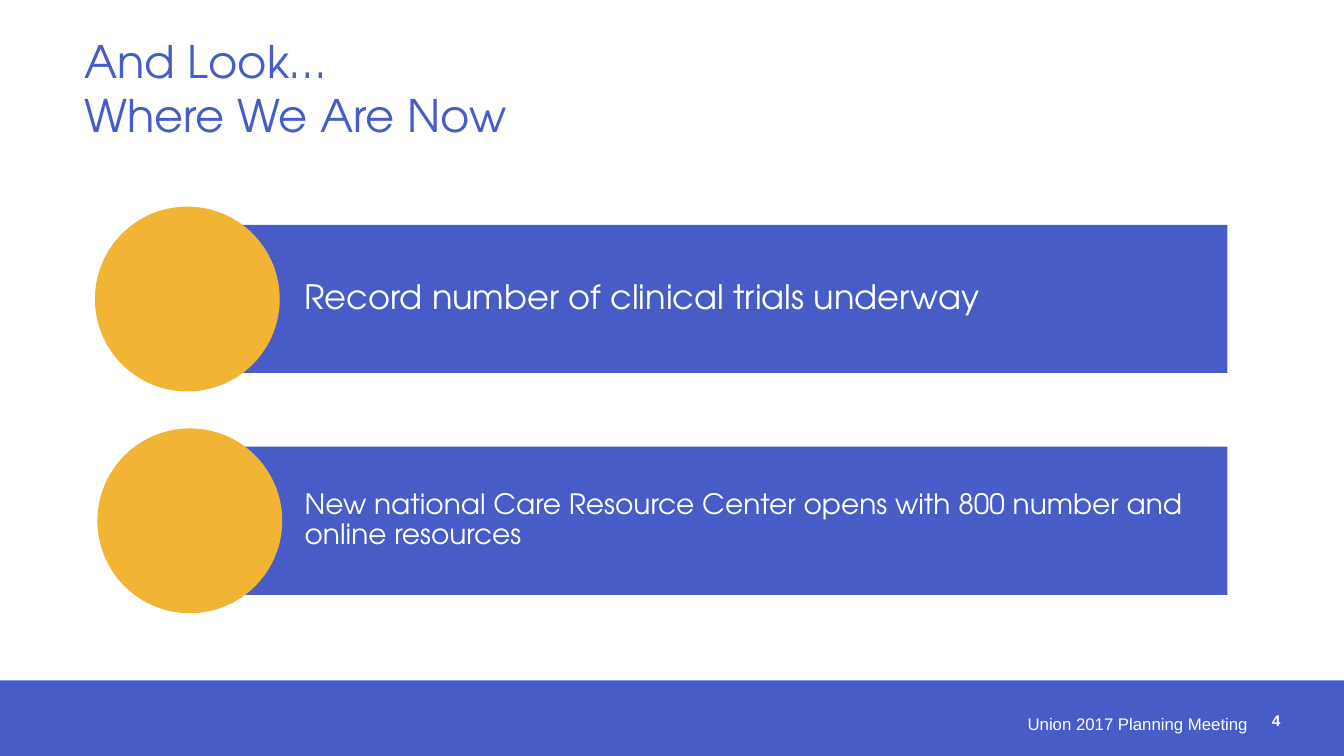
from pptx import Presentation
from pptx.dml.color import RGBColor
from pptx.enum.shapes import MSO_SHAPE
from pptx.enum.text import MSO_ANCHOR, MSO_AUTO_SIZE, PP_ALIGN
from pptx.util import Pt

BLUE = RGBColor(0x48, 0x5C, 0xC7)
GOLD = RGBColor(0xF1, 0xB4, 0x34)
WHITE = RGBColor(0xFF, 0xFF, 0xFF)
HEADING_FONT = "TeX Gyre Adventor"
FOOTER_FONT = "Arial"

TITLE = "And Look…\vWhere We Are Now"
# text, font size, circle left, text margin
MILESTONES = [
    ("Record number of clinical trials underway", 24, 67.8, 5),
    ("New national Care Resource Center opens with 800 number and online resources",
     20, 69.6, 4.3),
]
FOOTER = "Union 2017 Planning Meeting"
PAGE_NUMBER = "4"

SLIDE_WIDTH, SLIDE_HEIGHT = 960, 540
FOOTER_TOP = 486
BAR_LEFT, BAR_WIDTH, BAR_HEIGHT = 133.8, 743, 105.8
CIRCLE_SIZE = 132
FIRST_CIRCLE_TOP, ROW_PITCH = 147.6, 158.4
TEXT_INDENT = 83.8


def add_filled_shape(kind, left, top, width, height, color):
    shape = slide.shapes.add_shape(kind, Pt(left), Pt(top), Pt(width), Pt(height))
    shape.shadow.inherit = False
    shape.fill.solid()
    shape.fill.fore_color.rgb = color
    shape.line.fill.background()
    return shape


def set_margins(frame, left, top, right, bottom):
    frame.margin_left, frame.margin_top = Pt(left), Pt(top)
    frame.margin_right, frame.margin_bottom = Pt(right), Pt(bottom)


def write(frame, text, font_name, size, color, align=PP_ALIGN.LEFT, bold=False):
    frame.word_wrap = True
    paragraph = frame.paragraphs[0]
    paragraph.text = text
    paragraph.alignment = align
    paragraph.font.name = font_name
    paragraph.font.size = Pt(size)
    paragraph.font.bold = bold
    paragraph.font.color.rgb = color
    return paragraph


def add_footer_text(text, left, top, width, margins, size, **style):
    box = slide.shapes.add_textbox(Pt(left), Pt(top), Pt(width), Pt(13))
    set_margins(box.text_frame, *margins)
    paragraph = write(box.text_frame, text, FOOTER_FONT, size, WHITE, **style)
    paragraph.line_spacing = Pt(12.1)


presentation = Presentation()
presentation.slide_width = Pt(SLIDE_WIDTH)
presentation.slide_height = Pt(SLIDE_HEIGHT)
slide = presentation.slides.add_slide(presentation.slide_layouts[5])

add_filled_shape(MSO_SHAPE.RECTANGLE, 0, FOOTER_TOP, SLIDE_WIDTH,
                 SLIDE_HEIGHT - FOOTER_TOP, BLUE)

title = slide.shapes.title
title.left, title.top, title.width, title.height = Pt(60), Pt(24), Pt(672), Pt(47)
title.text_frame.auto_size = MSO_AUTO_SIZE.NONE
title.text_frame.vertical_anchor = MSO_ANCHOR.TOP
set_margins(title.text_frame, 0, 0, 0, 0)
write(title.text_frame, TITLE, HEADING_FONT, 32, BLUE)

for row, (text, size, circle_left, margin) in enumerate(MILESTONES):
    circle_top = FIRST_CIRCLE_TOP + row * ROW_PITCH
    bar_top = circle_top + (CIRCLE_SIZE - BAR_HEIGHT) / 2
    bar = add_filled_shape(MSO_SHAPE.RECTANGLE, BAR_LEFT, bar_top,
                           BAR_WIDTH, BAR_HEIGHT, BLUE)
    bar.text_frame.vertical_anchor = MSO_ANCHOR.MIDDLE
    set_margins(bar.text_frame, TEXT_INDENT, margin, margin, margin)
    write(bar.text_frame, text, HEADING_FONT, size, WHITE).line_spacing = 0.9
    add_filled_shape(MSO_SHAPE.OVAL, circle_left, circle_top,
                     CIRCLE_SIZE, CIRCLE_SIZE, GOLD)

add_footer_text(PAGE_NUMBER, 906.5, 509, 16.5, (2, 0, 0, 0), 11, bold=True)
add_footer_text(FOOTER, 640, 508.3, 258.5, (7.2, 3.6, 7.2, 3.6), 12,
                align=PP_ALIGN.RIGHT)

presentation.save("out.pptx")
